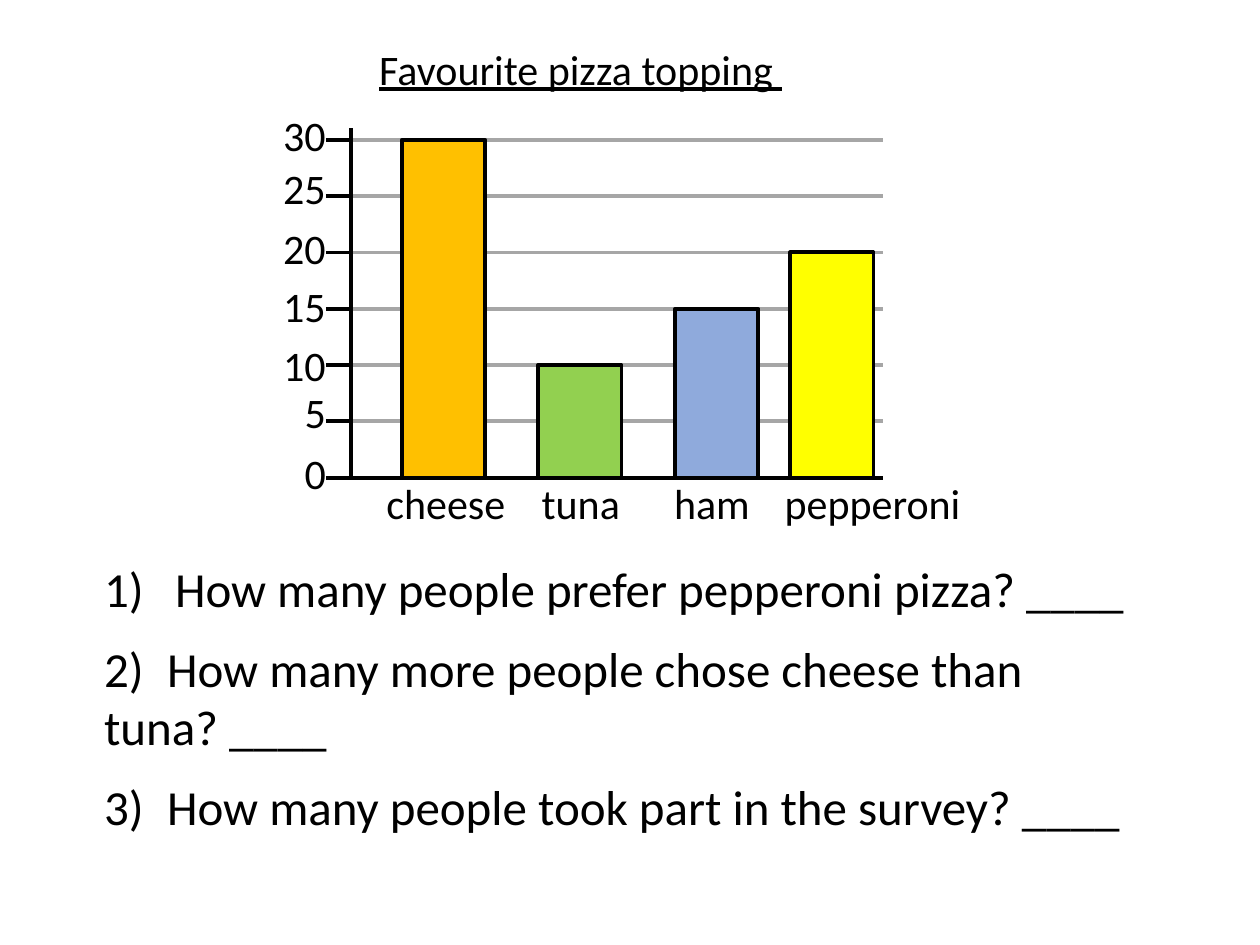
"""Builds a worksheet slide with a drawn bar chart and three questions."""
from dataclasses import dataclass

from lxml import etree
from pptx import Presentation
from pptx.dml.color import RGBColor
from pptx.enum.shapes import MSO_CONNECTOR, MSO_SHAPE
from pptx.enum.text import MSO_ANCHOR, MSO_AUTO_SIZE, PP_ALIGN
from pptx.oxml.ns import qn
from pptx.util import Cm, Pt

STRAIGHT = MSO_CONNECTOR.STRAIGHT
RECTANGLE = MSO_SHAPE.RECTANGLE
TOP = MSO_ANCHOR.TOP
GROW = MSO_AUTO_SIZE.SHAPE_TO_FIT_TEXT
LEFT = PP_ALIGN.LEFT

BASE_Y, TOP_Y = 9.63, 2.82
AXIS_X, TICK_X, END_X = 7.08, 6.57, 17.81
LABEL_RIGHT, LABEL_HEIGHT = 6.83, 1.27
BAR_WIDTH = 1.68
MAX_VALUE = 30

SCALE = [
    (0, 8.89), (5, 7.67), (10, 6.71), (15, 5.54),
    (20, 4.37), (25, 3.15), (30, 2.08),
]
TOPPINGS = [
    ("cheese", 30, "FFC000", 8.1, 7.54, 2.95),
    ("tuna", 10, "92D050", 10.85, 10.67, 2.11),
    ("ham", 15, "8FAADC", 13.61, 13.34, 2.06),
    ("pepperoni", 20, "FFFF00", 15.93, 15.57, 4.09),
]
QUESTIONS = [
    "How many people prefer pepperoni pizza? ____",
    "2)\tHow many more people chose cheese than tuna? ____",
    "3)\tHow many people took part in the survey? ____",
]


@dataclass(frozen=True)
class Theme:
    """Colours, font and type sizes of the worksheet."""
    font: str = "Calibri"
    ink: str = "000000"
    grid: str = "A6A6A6"
    label_size: int = 24
    question_size: int = 28
    question_gap: int = 12
    line_width: float = 2.25


class Worksheet:
    """Holds the theme and the current slide, and draws each kind of element."""

    def __init__(self, theme, slide):
        self.theme = theme
        self.slide = slide

    def add_span(self, para, text, size, underline=None):
        """Add one styled run to a paragraph."""
        span = para.add_run()
        span.text = text
        span.font.name = self.theme.font
        span.font.size = Pt(size)
        span.font.underline = underline
        span.font.color.rgb = RGBColor.from_string(self.theme.ink)

    def title(self, text, left, top, width, height):
        """Place and fill the title placeholder."""
        box = self.slide.shapes.title
        box.left, box.top = Cm(left), Cm(top)
        box.width, box.height = Cm(width), Cm(height)
        frame = box.text_frame
        frame.vertical_anchor = TOP
        frame.auto_size = GROW
        para = frame.paragraphs[0]
        para.alignment = LEFT
        self.add_span(para, text, self.theme.label_size, True)

    def label(self, text, left, top, width):
        """Add a one-line chart label."""
        box = self.slide.shapes.add_textbox(
            Cm(left), Cm(top), Cm(width), Cm(LABEL_HEIGHT))
        box.text_frame.word_wrap = False
        box.text_frame.auto_size = GROW
        self.add_span(
            box.text_frame.paragraphs[0], text, self.theme.label_size)

    def line(self, start_x, start_y, end_x, end_y, colour):
        """Add a straight line."""
        line = self.slide.shapes.add_connector(
            STRAIGHT, Cm(start_x), Cm(start_y), Cm(end_x), Cm(end_y))
        line.line.color.rgb = RGBColor.from_string(colour)
        line.line.width = Pt(self.theme.line_width)
        etree.SubElement(line._element.spPr, qn("a:effectLst"))

    def bar(self, left, top, colour):
        """Add a bar that stands on the base line."""
        bar = self.slide.shapes.add_shape(
            RECTANGLE, Cm(left), Cm(top), Cm(BAR_WIDTH), Cm(BASE_Y - top))
        bar.shadow.inherit = False
        bar.fill.solid()
        bar.fill.fore_color.rgb = RGBColor.from_string(colour)
        bar.line.color.rgb = RGBColor.from_string(self.theme.ink)
        bar.line.width = Pt(self.theme.line_width)

    def questions(self, texts, left, top, width, height):
        """Add the questions, the first one numbered with a hanging indent."""
        box = self.slide.shapes.add_textbox(
            Cm(left), Cm(top), Cm(width), Cm(height))
        frame = box.text_frame
        frame.word_wrap = True
        for index, text in enumerate(texts):
            para = frame.add_paragraph() if index else frame.paragraphs[0]
            properties = para._p.get_or_add_pPr()
            if index:
                tabs = etree.SubElement(properties, qn("a:tabLst"))
                etree.SubElement(
                    tabs, qn("a:tab"), pos=str(Cm(1.27)), algn="l")
                para.space_before = Pt(self.theme.question_gap)
            else:
                properties.set("marL", str(Cm(1.43)))
                properties.set("indent", str(-Cm(1.43)))
                etree.SubElement(
                    properties, qn("a:buFont"), typeface="+mj-lt")
                etree.SubElement(
                    properties, qn("a:buAutoNum"), type="arabicParenR")
            self.add_span(para, text, self.theme.question_size)


def height_of(value):
    """Give the vertical place of a value on the scale."""
    return BASE_Y - (BASE_Y - TOP_Y) * value / MAX_VALUE


def main():
    """Build and save the deck."""
    deck = Presentation()
    deck.slide_width, deck.slide_height = Cm(25.4), Cm(19.05)
    theme = Theme()
    page = Worksheet(theme, deck.slides.add_slide(deck.slide_layouts[5]))

    page.title("Favourite pizza topping ", 7.39, 0.74, 13.21, LABEL_HEIGHT)
    page.questions(QUESTIONS, 1.85, 11.13, 21.34, 6.4)

    for value, label_top in SCALE:
        y = height_of(value)
        if value:
            page.line(AXIS_X, y, END_X, y, theme.grid)
        page.line(TICK_X, y, AXIS_X, y, theme.ink)
        width = 1.37 if value >= 10 else 0.94
        page.label(str(value), LABEL_RIGHT - width, label_top, width)
    page.line(AXIS_X, BASE_Y, END_X, BASE_Y, theme.ink)
    page.line(AXIS_X, BASE_Y, AXIS_X, 2.59, theme.ink)

    for name, value, colour, bar_left, label_left, label_width in TOPPINGS:
        page.bar(bar_left, height_of(value), colour)
        page.label(name, label_left, 9.5, label_width)

    deck.save("out.pptx")


if __name__ == "__main__":
    main()
